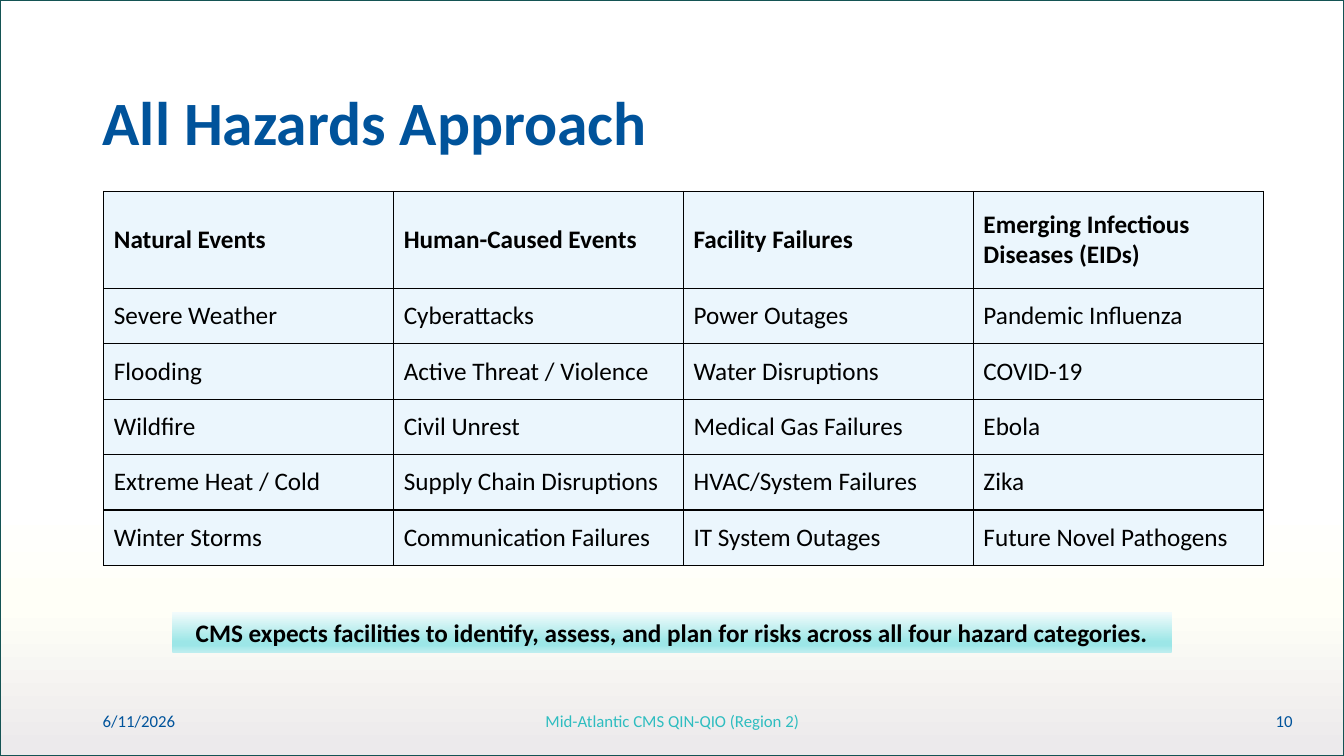
from dataclasses import dataclass

from lxml import etree
from pptx import Presentation
from pptx import util as u
from pptx.dml.color import RGBColor
from pptx.enum import shapes, text
from pptx.oxml import ns

SCALE = 9144  # EMU in one px, 100 px to the inch
PAGE_WIDTH, PAGE_HEIGHT = 1333, 750
Stops = tuple[tuple[int, str], ...]


@dataclass(frozen=True)
class Theme:
    font: str = "Calibri"
    blue: str = "00539B"
    teal: str = "2EBDC0"
    ink: str = "000000"
    frame: str = "145354"
    cell: str = "EBF6FD"
    backdrop: Stops = ((66, "FFFFFF"), (80, "FFFFF7"), (99, "ECEAEC"))
    banner: Stops = ((0, "F4FCFC"), (74, "9CE6E7"), (83, "9CE6E7"), (100, "BDEEEF"))
    title_size: int = 44
    body_size: int = 18
    footer_size: int = 12


THEME = Theme()


@dataclass(frozen=True)
class Area:
    left: int
    top: int
    width: int
    height: int

    def emu(self) -> tuple[u.Emu, ...]:
        return tuple(u.Emu(n * SCALE) for n in (self.left, self.top, self.width, self.height))


@dataclass(frozen=True)
class Label:
    words: str
    area: Area
    size: int
    color: str
    bold: bool = False
    align: text.PP_ALIGN = text.PP_ALIGN.LEFT
    line_spacing: float = 1.0


LABELS = (
    Label("All Hazards Approach", Area(92, 86, 864, 77), THEME.title_size, THEME.blue,
          bold=True, line_spacing=0.9),
    Label("6/11/2026", Area(92, 695, 185, 40), THEME.footer_size, THEME.blue),
    Label("Mid-Atlantic CMS QIN-QIO (Region 2)", Area(442, 695, 450, 40),
          THEME.footer_size, THEME.teal, align=text.PP_ALIGN.CENTER),
    Label("10", Area(992, 695, 300, 40), THEME.footer_size, THEME.blue,
          align=text.PP_ALIGN.RIGHT),
)

BANNER = Label(
    "CMS expects facilities to identify, assess, and plan for risks across all four hazard categories.",
    Area(171, 607, 991, 40), THEME.body_size, THEME.ink, bold=True, align=text.PP_ALIGN.CENTER)

HAZARDS = {
    "Natural Events": (
        "Severe Weather", "Flooding", "Wildfire", "Extreme Heat / Cold", "Winter Storms"),
    "Human-Caused Events": (
        "Cyberattacks", "Active Threat / Violence", "Civil Unrest",
        "Supply Chain Disruptions", "Communication Failures"),
    "Facility Failures": (
        "Power Outages", "Water Disruptions", "Medical Gas Failures",
        "HVAC/System Failures", "IT System Outages"),
    "Emerging Infectious Diseases (EIDs)": (
        "Pandemic Influenza", "COVID-19", "Ebola", "Zika", "Future Novel Pathogens"),
}
TABLE_AREA = Area(103, 190, 1150, 370)
HEADER_HEIGHT, ROW_HEIGHT = 96, 55


def write(frame, words: str, size: int, color: str, bold: bool = False) -> None:
    frame.text = words
    for span in frame.paragraphs[0].runs:
        span.font.name = THEME.font
        span.font.size = u.Pt(size)
        span.font.bold = bold
        span.font.color.rgb = RGBColor.from_string(color)


def fill_label(box, label: Label) -> None:
    frame = box.text_frame
    frame.word_wrap = True
    frame.vertical_anchor = text.MSO_ANCHOR.MIDDLE
    write(frame, label.words, label.size, label.color, label.bold)
    para = frame.paragraphs[0]
    para.alignment = label.align
    para.line_spacing = label.line_spacing


def add_gradient_box(page, area: Area, stops: Stops):
    box = page.shapes.add_shape(shapes.MSO_SHAPE.RECTANGLE, *area.emu())
    box.shadow.inherit = False
    box.line.fill.background()
    box.fill.gradient()
    box.fill.gradient_angle = 270  # top to bottom
    stop_list = box.fill._xPr.find(".//" + ns.qn("a:gsLst"))
    for stop in list(stop_list):
        stop_list.remove(stop)
    for percent, color in stops:
        stop = etree.SubElement(stop_list, ns.qn("a:gs"), pos=str(percent * 1000))
        etree.SubElement(stop, ns.qn("a:srgbClr"), val=color)
    return box


def add_borders(cell) -> None:
    properties = cell._tc.get_or_add_tcPr()
    for side in ("L", "R", "T", "B"):
        line = etree.SubElement(properties, ns.qn(f"a:ln{side}"), w=str(u.Pt(1)))
        solid = etree.SubElement(line, ns.qn("a:solidFill"))
        etree.SubElement(solid, ns.qn("a:srgbClr"), val=THEME.ink)


def add_hazard_table(page) -> None:
    columns = [(heading, *events) for heading, events in HAZARDS.items()]
    table = page.shapes.add_table(len(columns[0]), len(columns), *TABLE_AREA.emu()).table
    for row_index, row in enumerate(table.rows):
        is_header = row_index == 0
        row.height = u.Emu((HEADER_HEIGHT if is_header else ROW_HEIGHT) * SCALE)
        for cell, column in zip(row.cells, columns):
            add_borders(cell)
            cell.fill.solid()
            cell.fill.fore_color.rgb = RGBColor.from_string(THEME.cell)
            cell.vertical_anchor = text.MSO_ANCHOR.MIDDLE
            write(cell.text_frame, column[row_index], THEME.body_size, THEME.ink, is_header)


def main() -> None:
    deck = Presentation()
    deck.slide_width = u.Emu(PAGE_WIDTH * SCALE)
    deck.slide_height = u.Emu(PAGE_HEIGHT * SCALE)
    page = deck.slides.add_slide(deck.slide_layouts[6])

    # Framed backdrop
    backdrop = add_gradient_box(page, Area(0, 0, PAGE_WIDTH, PAGE_HEIGHT), THEME.backdrop)
    backdrop.line.color.rgb = RGBColor.from_string(THEME.frame)
    backdrop.line.width = u.Pt(1.5)

    # Title and footer
    for label in LABELS:
        fill_label(page.shapes.add_textbox(*label.area.emu()), label)

    # Hazard categories
    add_hazard_table(page)

    # Closing message
    fill_label(add_gradient_box(page, BANNER.area, THEME.banner), BANNER)

    deck.save("out.pptx")


if __name__ == "__main__":
    main()
